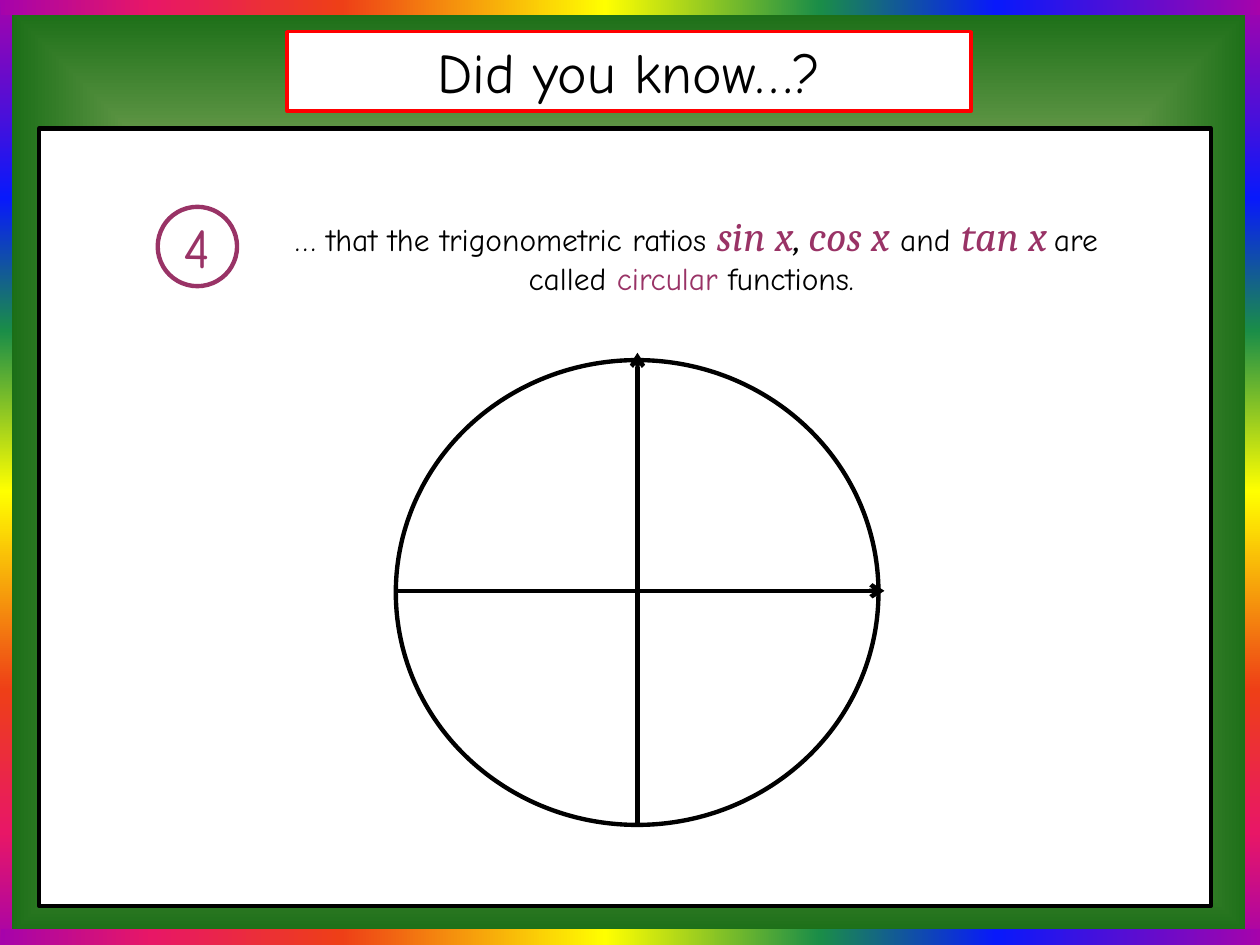
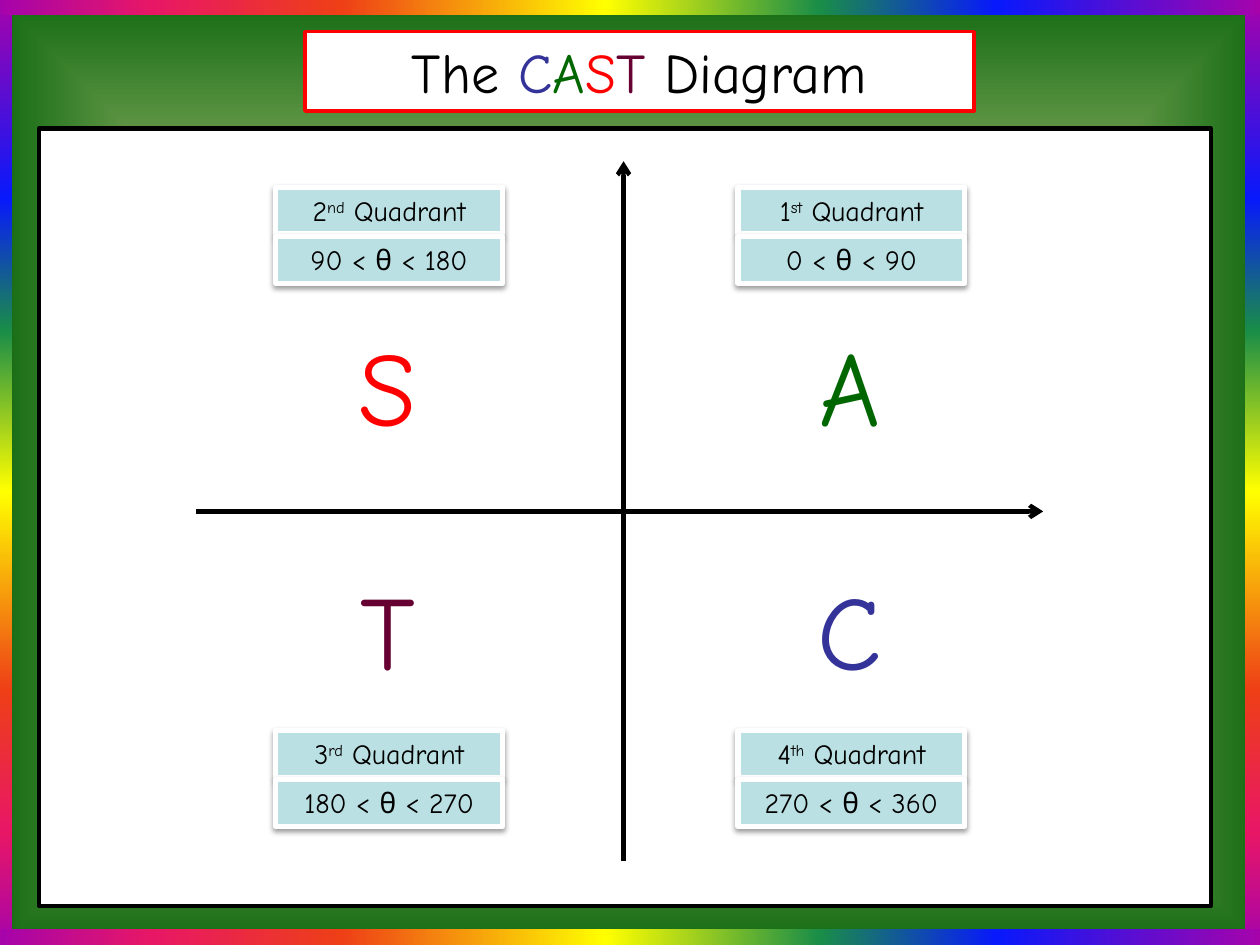
from dataclasses import dataclass

from pptx import Presentation
from pptx.dml.color import RGBColor as RGB
from pptx.enum.shapes import MSO_CONNECTOR, MSO_SHAPE
from pptx.enum.text import MSO_ANCHOR as ANCHOR, PP_ALIGN
from pptx.oxml import parse_xml
from pptx.oxml.ns import nsdecls
from pptx.util import Cm, Pt

WIDE, HIGH = 25.4, 19.05
BLACK, WHITE = RGB(0, 0, 0), RGB(255, 255, 255)
RED, GREEN = RGB(255, 0, 0), RGB(0, 0x66, 0)
BLUE, WINE = RGB(0x33, 0x33, 0x99), RGB(0x66, 0, 0x33)
PLUM, AQUA = RGB(0x99, 0x33, 0x66), RGB(0xBB, 0xE0, 0xE3)
RAINBOW = [(0, RGB(0xA6, 0x03, 0xAB)), (21, RGB(0x08, 0x19, 0xFB)),
           (35, RGB(0x1A, 0x8D, 0x48)), (52, RGB(0xFF, 0xFF, 0x00)),
           (73, RGB(0xEE, 0x3F, 0x17)), (88, RGB(0xE8, 0x17, 0x66)),
           (100, RGB(0xA6, 0x03, 0xAB))]
MEADOW = [(0, RGB(0xDD, 0xEB, 0xCF)), (50, RGB(0x9C, 0xB8, 0x6E)),
          (100, RGB(0x15, 0x6B, 0x13))]
DOWN = '<a:lin {} ang="5400000" scaled="0"/>'
INWARD = ('<a:path {} path="shape"><a:fillToRect l="50000" t="50000" '
          'r="50000" b="50000"/></a:path>')
ARROW = '<a:tailEnd {} type="arrow"/>'
SHADOW = ('<a:outerShdw {} blurRad="40000" dist="20000" dir="5400000" '
          'rotWithShape="0"><a:srgbClr val="000000"><a:alpha val="38000"/>'
          '</a:srgbClr></a:outerShdw>')
HAND, SERIF = "Comic Neue", "Cambria"


@dataclass
class Bit:
    """A run of text in one style."""
    text: str
    size: int
    color: RGB = BLACK
    font: str = HAND
    base: int = 0


def node(xml):
    return parse_xml(xml.format(nsdecls("a")))


def blend(owner, stops, shade):
    """Fill a shape or background with a gradient of several stops."""
    owner.fill.gradient()
    grad = owner.element.xpath(".//a:gradFill")[0]
    grad.clear()
    grad.set("rotWithShape", "1")
    marks = "".join(f'<a:gs pos="{at * 1000}"><a:srgbClr val="{color}"/></a:gs>'
                    for at, color in stops)
    grad.append(node("<a:gsLst {}>" + marks + "</a:gsLst>"))
    grad.append(node(shade))


def write(frame, bits, anchor=ANCHOR.MIDDLE, wrap=True):
    frame.word_wrap = wrap
    frame.vertical_anchor = anchor
    para = frame.paragraphs[0]
    para.alignment = PP_ALIGN.CENTER
    for bit in bits:
        run = para.add_run()
        run.text = bit.text
        font = run.font
        font.name, font.size = bit.font, Pt(bit.size)
        font.color.rgb = bit.color
        font.italic = bit.font == SERIF
        if bit.base:
            run._r.get_or_add_rPr().set("baseline", str(bit.base * 1000))


def shape(slide, box, fill=None, line=None, width=2.5, kind=MSO_SHAPE.RECTANGLE):
    item = slide.shapes.add_shape(kind, *map(Cm, box))
    item.shadow.inherit = False
    if fill is None:
        item.fill.background()
    else:
        item.fill.solid()
        item.fill.fore_color.rgb = fill
    if line is None:
        item.line.fill.background()
    else:
        item.line.color.rgb = line
        item.line.width = Pt(width)
    return item


def note(slide, box, bits):
    item = slide.shapes.add_textbox(*map(Cm, box))
    write(item.text_frame, bits, ANCHOR.TOP)


def arrow(slide, *ends):
    item = slide.shapes.add_connector(MSO_CONNECTOR.STRAIGHT, *map(Cm, ends))
    item.line.color.rgb = BLACK
    item.line.width = Pt(2.5)
    item.element.xpath(".//a:ln")[0].append(node(ARROW))
    item.element.spPr.append(node("<a:effectLst {}/>"))


def axes(slide, box, across, up):
    """Arrows over the box: one at height across, one at distance up."""
    left, top, wide, high = box
    arrow(slide, left, top + across, left + wide, top + across)
    arrow(slide, left + up, top + high, left + up, top)


def frame(prs, box, title):
    """A new slide with its border, panel and title."""
    slide = prs.slides.add_slide(prs.slide_layouts[6])
    blend(slide.background, MEADOW, INWARD)
    for left in (-0.05, WIDE - 0.3):
        blend(shape(slide, (left, 0, 0.3, HIGH)), RAINBOW, DOWN)
    for mid in (0.13, 18.9):
        band = shape(slide, (12.55, mid - WIDE / 2, 0.33, WIDE))
        band.rotation = 90
        blend(band, RAINBOW, DOWN)
    shape(slide, (0.79, 2.59, 23.62, 15.67), WHITE, BLACK)
    write(shape(slide, box, WHITE, RED, 2).text_frame, title)
    return slide


def fact(slide, box):
    """A numbered badge with the statement beside it."""
    left, top, wide, high = box
    badge = shape(slide, (left, top + 0.08, 1.6, 1.6), line=PLUM,
                  kind=MSO_SHAPE.OVAL)
    write(badge.text_frame, [Bit("4", 32, PLUM)], wrap=False)
    note(slide, (left + 2.26, top, wide - 2.26, high), [
        Bit("… that the trigonometric ratios ", 18),
        Bit("sin x", 24, PLUM, SERIF), Bit(", ", 20, BLACK, SERIF),
        Bit("cos x", 24, PLUM, SERIF), Bit(" and ", 18),
        Bit("tan x", 24, PLUM, SERIF), Bit(" ", 18, BLACK, SERIF),
        Bit("are called ", 18), Bit("circular", 18, PLUM),
        Bit(" functions. ", 18)])


def circle(slide, box):
    left, top, wide, high = box
    axes(slide, (left - 0.03, top - 0.15, wide + 0.15, high + 0.18), 4.8, 4.9)
    shape(slide, box, line=BLACK, kind=MSO_SHAPE.OVAL)


def label(slide, box, bits):
    item = shape(slide, box, AQUA, WHITE, 3)
    item.element.xpath(".//a:effectLst")[0].append(node(SHADOW))
    write(item.text_frame, bits, ANCHOR.TOP)


def sector(slide, left, top, rank, span):
    """The name of a quadrant above its range of angles."""
    name = [Bit(rank[0], 16), Bit(rank[1:], 16, base=30), Bit(" Quadrant", 16)]
    for row, bits in enumerate((name, [Bit(span, 16)])):
        label(slide, (left, top + 0.99 * row, 4.57, 0.94), bits)


def cast(slide, box):
    axes(slide, box, 7.06, 8.61)
    left, top = box[:2]
    west, east = left + 1.6, left + 10.92
    north, south = top + 0.53, top + 11.48
    for col, row, rank, span, sign, color in (
            (east, north, "1st", "0 < θ < 90", "A", GREEN),
            (west, north, "2nd", "90 < θ < 180", "S", RED),
            (east, south, "4th", "270 < θ < 360", "C", BLUE),
            (west, south, "3rd", "180 < θ < 270", "T", WINE)):
        sector(slide, col, row, rank, span)
        drop = 2.57 if row == north else -3.45
        note(slide, (col + 1.03, row + drop, 2.45, 2.82), [Bit(sign, 60, color)])


def main():
    prs = Presentation()
    prs.slide_width, prs.slide_height = Cm(WIDE), Cm(HIGH)

    know = frame(prs, (5.79, 0.64, 13.79, 1.6), [Bit("Did you know…?", 32)])
    fact(know, (3.18, 4.09, 19.46, 2.06))
    circle(know, (7.98, 7.26, 9.73, 9.37))

    word = [Bit(sign, 32, color) for sign, color in
            zip("CAST", (BLUE, GREEN, RED, WINE))]
    chart = frame(prs, (6.15, 0.64, 13.49, 1.6),
                  [Bit("The ", 32), *word, Bit(" Diagram", 32)])
    cast(chart, (3.96, 3.25, 17.07, 14.1))

    prs.save("out.pptx")


if __name__ == "__main__":
    main()
